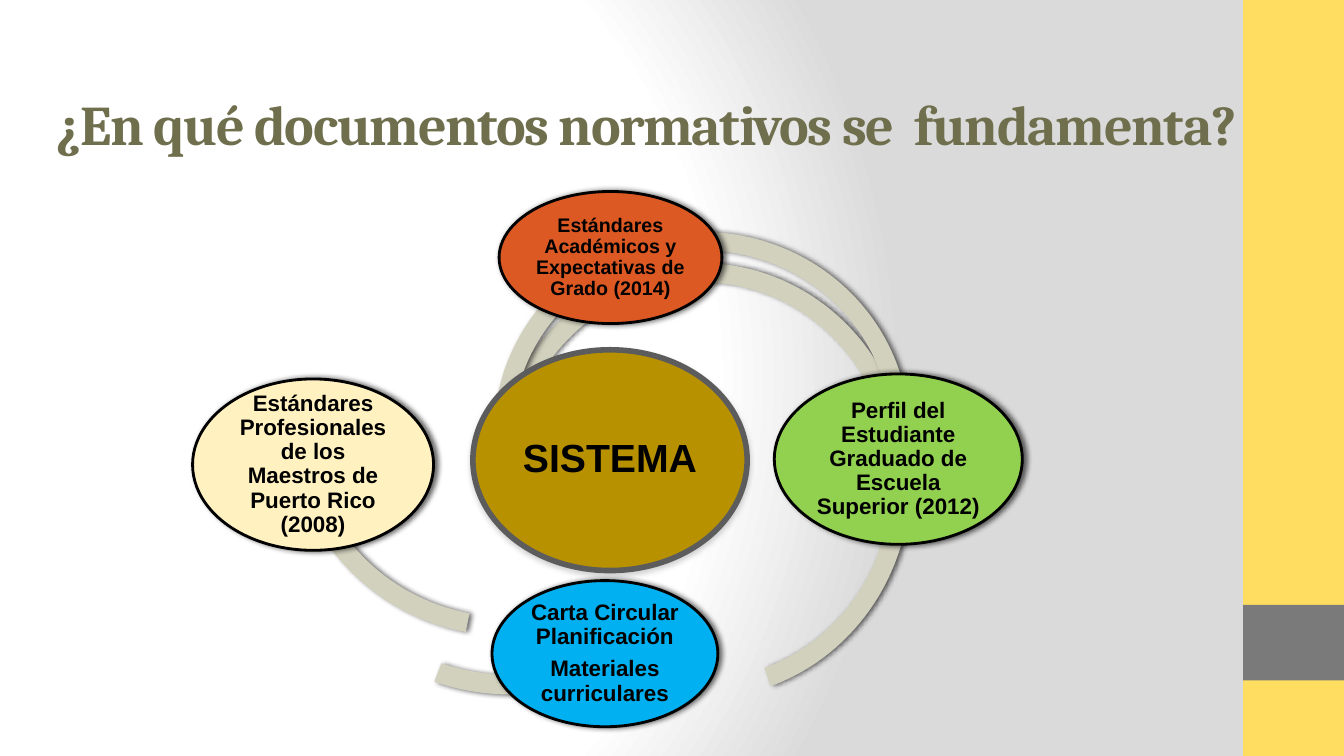
from dataclasses import dataclass

from lxml import etree
from pptx import Presentation
from pptx.dml.color import RGBColor
from pptx.enum.shapes import MSO_SHAPE
from pptx.enum.text import MSO_ANCHOR, MSO_AUTO_SIZE, PP_ALIGN
from pptx.oxml import parse_xml
from pptx.oxml.ns import nsdecls, qn
from pptx.shapes.autoshape import Shape
from pptx.shapes.shapetree import GroupShapes
from pptx.util import Inches, Pt

RECTANGLE, ELLIPSE, BLOCK_ARC = MSO_SHAPE.RECTANGLE, MSO_SHAPE.OVAL, MSO_SHAPE.BLOCK_ARC
MIDDLE, CENTER = MSO_ANCHOR.MIDDLE, PP_ALIGN.CENTER
NO_AUTOFIT = MSO_AUTO_SIZE.NONE

COLORS = {
    "yellow": "FEDD61", "gray": "7A7A7A", "olive": "6F6F4E", "ring": "D2D1BE",
    "gold": "B89101", "outline": "5C5C5C", "orange": "DC5924", "green": "92D050",
    "blue": "00B0F0", "cream": "FFF1C0", "black": "000000",
    "white": "FFFFFF", "shade": "DADADA",
}
ARC_THICKNESS = 0.046
DEGREE = 0.6  # one degree in adjustment units

Box = tuple[float, float, float, float]


@dataclass
class Bar:
    box: Box
    fill: str


@dataclass
class Arc:
    box: Box
    start: float
    end: float


@dataclass
class Node:
    box: Box
    fill: str
    paragraphs: list[str]
    size: int = 16
    inset: float = 0.02
    line: str = "black"
    line_width: int = 2
    shadow_alpha: int = 60
    shadow_angle: int = 0


BARS = [Bar((12.33, 0, 1, 7.5), "yellow"), Bar((12.33, 6, 1, 0.75), "gray")]

ARCS = [
    Arc((2.88, 2.16, 4.31, 4.15), 101.55, 180.53),
    Arc((2.83, 2.62, 4.47, 4.27), 36.93, 110.62),
    Arc((4.88, 2.61, 4.15, 4.32), 212.29, 71.34),
    Arc((4.9, 2.3, 4.12, 3.99), 145.43, 4.51),
]

NODES = [
    Node((4.69, 3.47, 2.72, 2.19), "gold", ["SISTEMA"], 28, 0.04, "outline", 4, 28, 90),
    Node((4.95, 1.9, 2.21, 1.31), "orange",
         ["Estándares Académicos y Expectativas de Grado (2014)"], 14),
    Node((7.68, 3.71, 2.46, 1.69), "green",
         ["Perfil del Estudiante Graduado de Escuela Superior (2012)"]),
    Node((4.88, 5.76, 2.24, 1.45), "blue",
         ["Carta Circular Planificación", "Materiales curriculares"]),
    Node((1.91, 3.76, 2.39, 1.7), "cream",
         ["Estándares Profesionales de los Maestros de Puerto Rico (2008)"]),
]


def color(name: str) -> RGBColor:
    return RGBColor.from_string(COLORS[name])


def add_filled(shapes: GroupShapes, kind: MSO_SHAPE, box: Box, fill: str) -> Shape:
    shape = shapes.add_shape(kind, *map(Inches, box))
    shape.shadow.inherit = False
    shape.fill.solid()
    shape.fill.fore_color.rgb = color(fill)
    shape.line.fill.background()
    return shape


def add_shadow(shape: Shape, name: str, alpha: int, angle: int) -> None:
    effects = shape.element.spPr.find(qn("a:effectLst"))
    shadow = etree.SubElement(effects, qn("a:outerShdw"), blurRad=str(Pt(4)),
                              dist=str(Pt(2)), dir=str(angle * 60000), rotWithShape="0")
    tone = etree.SubElement(shadow, qn("a:srgbClr"), val=COLORS[name])
    etree.SubElement(tone, qn("a:alpha"), val=str(alpha * 1000))


def add_arc(shapes: GroupShapes, arc: Arc) -> None:
    shape = add_filled(shapes, BLOCK_ARC, arc.box, "ring")
    values = (arc.start * DEGREE, arc.end * DEGREE, ARC_THICKNESS)
    for index, value in enumerate(values):
        shape.adjustments[index] = value
    add_shadow(shape, "black", 60, 0)


def add_node(shapes: GroupShapes, node: Node) -> None:
    shape = add_filled(shapes, ELLIPSE, node.box, node.fill)
    shape.line.fill.solid()
    shape.line.color.rgb = color(node.line)
    shape.line.width = Pt(node.line_width)
    add_shadow(shape, node.line, node.shadow_alpha, node.shadow_angle)

    frame = shape.text_frame
    frame.word_wrap = True
    frame.vertical_anchor = MIDDLE
    frame.margin_left = frame.margin_right = Inches(node.inset)
    frame.margin_top = frame.margin_bottom = Inches(node.inset)
    for index, text in enumerate(node.paragraphs):
        paragraph = frame.add_paragraph() if index else frame.paragraphs[0]
        paragraph.alignment = CENTER
        paragraph.line_spacing = 0.9
        paragraph.space_after = Pt(node.size * 0.35)
        run = paragraph.add_run()
        run.text = text
        run.font.name = "Arial"
        run.font.size = Pt(node.size)
        run.font.bold = True
        run.font.color.rgb = color("black")


def set_background(slide) -> None:
    fill = slide.background.fill
    fill.solid()
    solid = slide.element.cSld.find(".//" + qn("a:solidFill"))
    stops = "".join(
        f'<a:gs pos="{position * 1000}"><a:srgbClr val="{COLORS[name]}"/></a:gs>'
        for position, name in ((0, "white"), (75, "white"), (100, "shade")))
    gradient = parse_xml(
        f'<a:gradFill {nsdecls("a")} rotWithShape="1"><a:gsLst>{stops}</a:gsLst>'
        '<a:path path="circle"><a:fillToRect l="20000" t="50000" r="100000" b="50000"/>'
        '</a:path></a:gradFill>')
    solid.getparent().replace(solid, gradient)


def set_title(slide) -> None:
    title = slide.shapes.title
    title.left, title.top, title.width, title.height = map(Inches, (0, 0.28, 12.82, 1.88))
    frame = title.text_frame
    frame.auto_size = NO_AUTOFIT
    frame.word_wrap = True
    frame.vertical_anchor = MIDDLE
    paragraph = frame.paragraphs[0]
    paragraph.alignment = CENTER
    run = paragraph.add_run()
    run.text = "¿En qué documentos normativos se  fundamenta?"
    run.font.name = "Cambria"
    run.font.size = Pt(40)
    run.font.bold = True
    run.font.color.rgb = color("olive")
    run.font._element.set("spc", "-100")


def main() -> None:
    presentation = Presentation()
    presentation.slide_width = Inches(13.33)
    presentation.slide_height = Inches(7.5)
    slide = presentation.slides.add_slide(presentation.slide_layouts[5])

    # Background, title and side bars
    set_background(slide)
    set_title(slide)
    for bar in BARS:
        add_filled(slide.shapes, RECTANGLE, bar.box, bar.fill)

    # Ring of documents around the system
    diagram = slide.shapes.add_group_shape()
    for arc in ARCS:
        add_arc(diagram.shapes, arc)
    for node in NODES:
        add_node(diagram.shapes, node)

    presentation.save("out.pptx")


if __name__ == "__main__":
    main()
